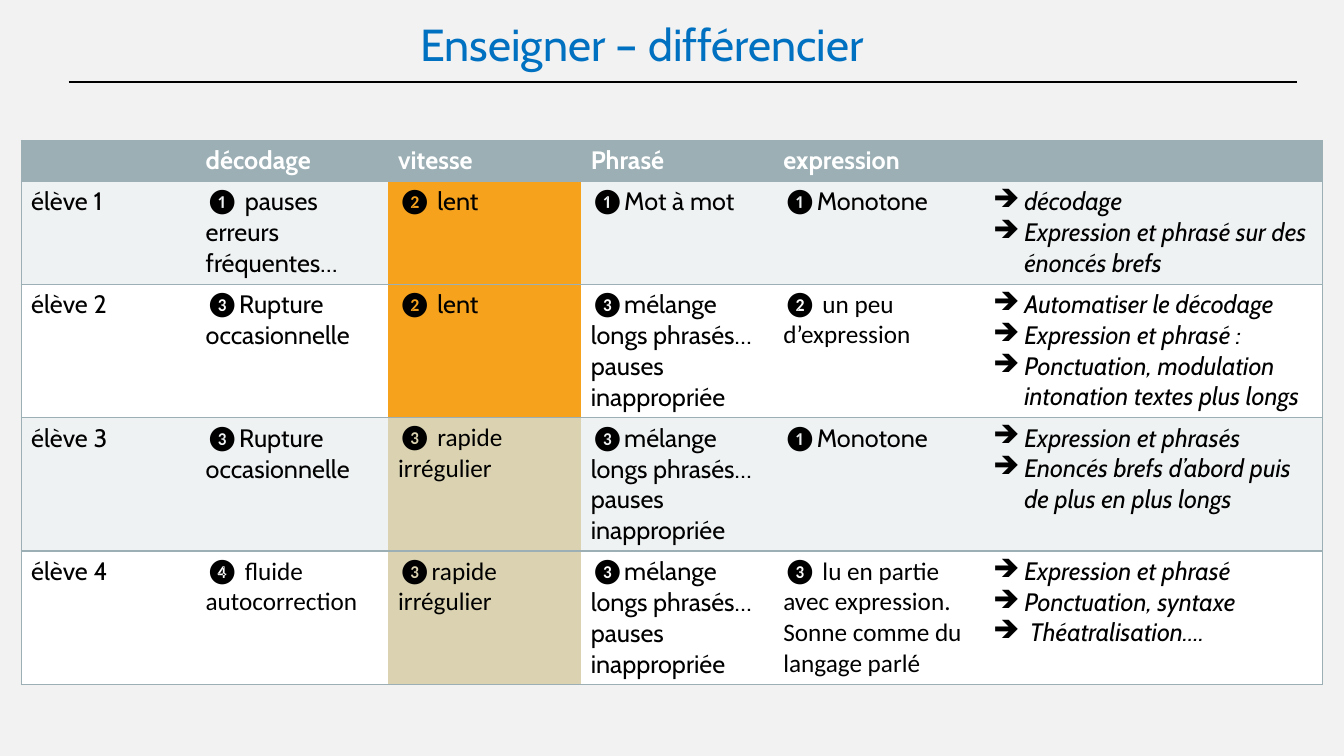
"""Build the reading-fluency differentiation slide."""
from typing import NamedTuple

from lxml.etree import SubElement
from pptx import Presentation
from pptx.dml.color import RGBColor
from pptx.enum.shapes import MSO_CONNECTOR
from pptx.enum.text import PP_ALIGN
from pptx.oxml.ns import qn
from pptx.util import Inches, Pt

HEAD, BAND, WHITE, BLACK = "9BAFB5", "EFF2F3", "FFFFFF", "000000"
SLOW, FAST = "F6A21D", "DAD2B0"
WIDTHS = [1.73, 1.91, 1.91, 1.91, 2.08, 3.37]
HEIGHTS = [0.41, 1.01, 1.32, 1.32, 1.32]
HEADINGS = ["", "décodage", "vitesse", "Phrasé", "expression", ""]


class Run(NamedTuple):
    text: str
    font: str = "Cabin"


class Para(NamedTuple):
    runs: list[Run]


class Pupil(NamedTuple):
    name: str
    decoding: list[Para]
    speed: list[Para]
    phrasing: list[Para]
    expression: list[Para]
    goals: list[str]
    speed_fill: str


def scored(mark: str, label: str) -> list[Para]:
    return [Para([Run(mark, "Calibri"), Run(label)])]


def calibri(*lines: str) -> list[Para]:
    return [Para([Run(line, "Calibri")]) for line in lines]


def plain(*lines: str) -> list[Para]:
    return [Para([Run(line)]) for line in lines]


BREAKS = scored("❸", "Rupture occasionnelle")
LENT = scored("❷ ", "lent")
MIXED = scored("❸", "mélange longs phrasés… pauses inappropriée")
MONOTONE = scored("❶", "Monotone")

PUPILS = [
    Pupil("élève 1", scored("❶", " pauses erreurs fréquentes…"), LENT,
          scored("❶", "Mot à mot"), MONOTONE,
          ["décodage", "Expression et phrasé sur des énoncés brefs"], SLOW),
    Pupil("élève 2", BREAKS, LENT, MIXED, calibri("❷ un peu d’expression"),
          ["Automatiser le décodage", "Expression et phrasé :",
           "Ponctuation, modulation intonation textes plus longs"], SLOW),
    Pupil("élève 3", BREAKS, calibri("❸ rapide irrégulier"), MIXED, MONOTONE,
          ["Expression et phrasés",
           "Enoncés brefs d’abord puis de plus en plus longs"], FAST),
    Pupil("élève 4", calibri("❹ fluide autocorrection"),
          calibri("❸rapide irrégulier"), MIXED,
          calibri("❸ lu en partie avec expression.",
                  "Sonne comme du langage parlé"),
          ["Expression et phrasé", "Ponctuation, syntaxe",
           " Théatralisation…."], FAST),
]


def rgb(value: str) -> RGBColor:
    return RGBColor.from_string(value)


def add_run(p, run: Run, size: float, color: str,
            bold: bool = False, italic: bool = False) -> None:
    r = p.add_run()
    r.text = run.text
    r.font.name = run.font
    r.font.size = Pt(size)
    r.font.bold = bold
    r.font.italic = italic
    r.font.color.rgb = rgb(color)


def add_bullet(p) -> None:
    pPr = p._p.get_or_add_pPr()
    pPr.set("marL", str(Inches(0.31)))
    pPr.set("indent", str(-Inches(0.31)))
    SubElement(pPr, qn("a:buChar")).set("char", "➔")


def set_borders(cell, sides: str) -> None:
    tcPr = cell._tc.get_or_add_tcPr()
    for side in "LRTB":
        ln = SubElement(tcPr, qn(f"a:ln{side}"))
        if side in sides:
            ln.set("w", str(Pt(1)))
            fill = SubElement(ln, qn("a:solidFill"))
            SubElement(fill, qn("a:srgbClr")).set("val", HEAD)
        else:
            SubElement(ln, qn("a:noFill"))


def fill_cell(cell, paras: list[Para], fill: str, sides: str, color: str = BLACK,
              bold: bool = False, bulleted: bool = False) -> None:
    set_borders(cell, sides)
    cell.fill.solid()
    cell.fill.fore_color.rgb = rgb(fill)
    tf = cell.text_frame
    for i, para in enumerate(paras):
        p = tf.add_paragraph() if i else tf.paragraphs[0]
        if bulleted:
            add_bullet(p)
        for run in para.runs:
            add_run(p, run, 18, color, bold, bulleted)


def add_grid(s) -> None:
    frame = s.shapes.add_table(len(HEIGHTS), len(WIDTHS), Inches(0.21), Inches(1.39),
                               Inches(sum(WIDTHS)), Inches(sum(HEIGHTS)))
    table = frame.table
    table.first_row = table.horz_banding = False
    for column, width in zip(table.columns, WIDTHS):
        column.width = Inches(width)
    for row, height in zip(table.rows, HEIGHTS):
        row.height = Inches(height)
    last = len(WIDTHS) - 1
    sides = ["LTB" if c == 0 else "RTB" if c == last else "TB" for c in range(last + 1)]
    for c, heading in enumerate(HEADINGS):
        paras = plain(heading) if heading else []
        fill_cell(table.cell(0, c), paras, HEAD, sides[c], WHITE, bold=True)
    for n, pupil in enumerate(PUPILS, 1):
        base = BAND if n % 2 else WHITE
        contents = [plain(pupil.name), pupil.decoding, pupil.speed, pupil.phrasing,
                    pupil.expression, plain(*pupil.goals)]
        for c, paras in enumerate(contents):
            fill = pupil.speed_fill if c == 2 else base
            fill_cell(table.cell(n, c), paras, fill, sides[c], bulleted=c == last)


def add_title(s) -> None:
    sp = s.shapes.add_textbox(Inches(0.79), Inches(0.18), Inches(11.26), Inches(0.85))
    tf = sp.text_frame
    tf.word_wrap = True
    p = tf.paragraphs[0]
    p.alignment = PP_ALIGN.CENTER
    p.line_spacing = 0.9
    p.space_before = Pt(10)
    add_run(p, Run("Enseigner – différencier "), 32, "0070C0")


def add_rule(s) -> None:
    line = s.shapes.add_connector(MSO_CONNECTOR.STRAIGHT, Inches(0.68), Inches(0.81),
                                  Inches(12.86), Inches(0.81))
    line.line.color.rgb = rgb(BLACK)
    line.line.width = Pt(1.5)
    SubElement(line._element.spPr, qn("a:effectLst"))


def main() -> None:
    prs = Presentation()
    prs.slide_width, prs.slide_height = Inches(13.33), Inches(7.5)
    s = prs.slides.add_slide(prs.slide_layouts[6])
    s.background.fill.solid()
    s.background.fill.fore_color.rgb = rgb("F2F2F2")
    add_grid(s)
    add_title(s)
    add_rule(s)
    prs.save("out.pptx")


if __name__ == "__main__":
    main()
